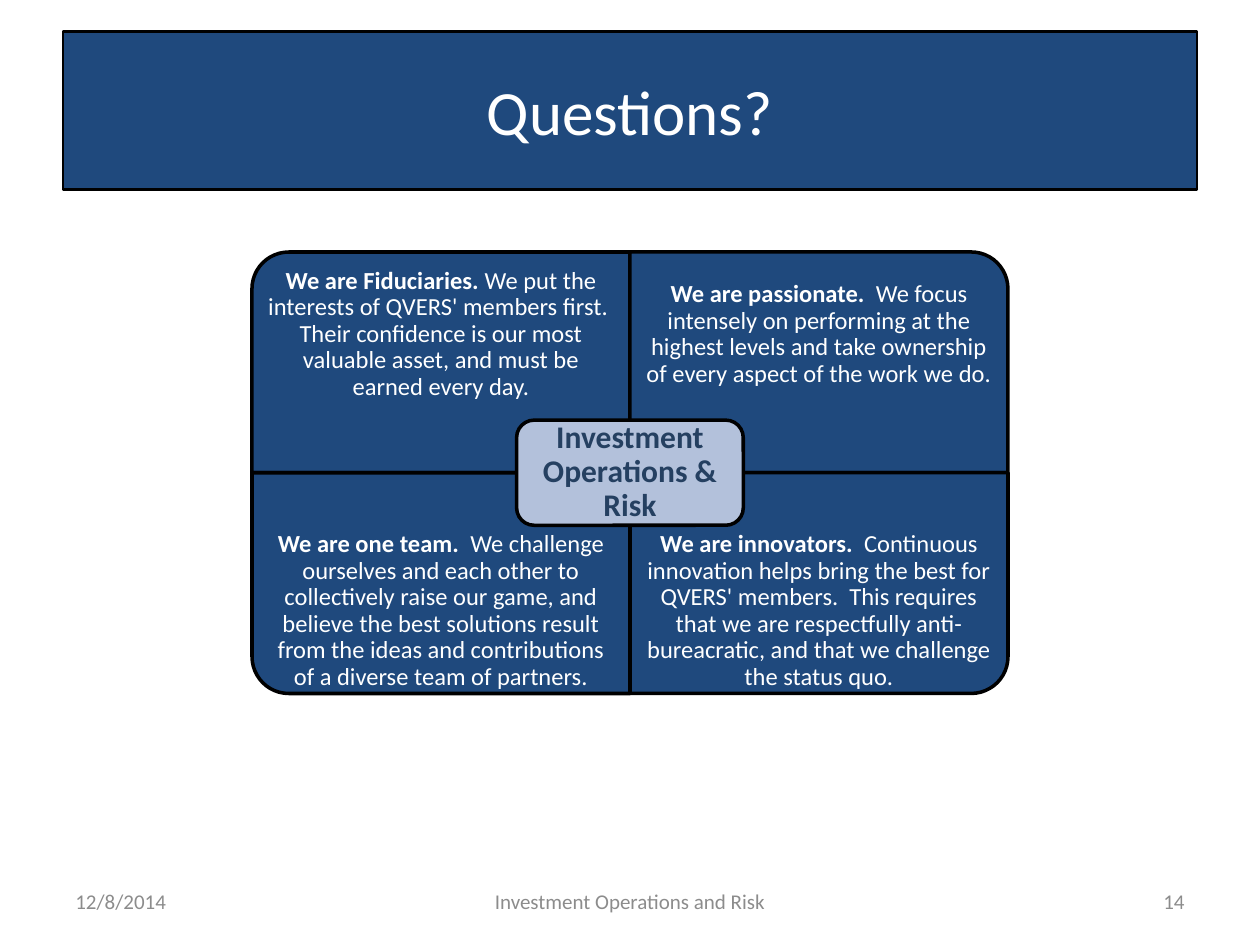
from pptx import Presentation
from pptx.dml.color import RGBColor
from pptx.enum.shapes import MSO_SHAPE
from pptx.enum.text import MSO_ANCHOR, PP_ALIGN
from pptx.util import Cm, Pt

RECTANGLE = MSO_SHAPE.RECTANGLE
ONE_ROUND_CORNER = MSO_SHAPE.ROUND_1_RECTANGLE
ROUNDED = MSO_SHAPE.ROUNDED_RECTANGLE
LEFT, CENTER, RIGHT = PP_ALIGN.LEFT, PP_ALIGN.CENTER, PP_ALIGN.RIGHT
MIDDLE = MSO_ANCHOR.MIDDLE

COLORS = {
    "navy": "1F497D",
    "pale": "B3C1DB",
    "ink": "254061",
    "gray": "8C8C8C",
    "black": "000000",
    "white": "FFFFFF",
}


class SlideBuilder:
    """Holds the style and the current slide; lengths are in centimetres."""

    font = "Calibri"

    def __init__(self, page):
        self.page = page

    def color(self, name):
        return RGBColor.from_string(COLORS[name])

    def shape(self, kind, left, top, width, height, fill, line_width, turn=0):
        # A quarter turn swaps the sides around the same centre
        if turn % 180:
            left += (width - height) / 2
            top += (height - width) / 2
            width, height = height, width
        box = self.page.shapes.add_shape(
            kind, Cm(left), Cm(top), Cm(width), Cm(height))
        box.rotation = turn
        box.shadow.inherit = False
        box.fill.solid()
        box.fill.fore_color.rgb = self.color(fill)
        box.line.color.rgb = self.color("black")
        box.line.width = Pt(line_width)
        return box

    def label(self, box, spans, size, color, align=CENTER):
        """Fill a box with one paragraph of (text, bold) spans."""
        frame = box.text_frame
        frame.word_wrap = True
        frame.vertical_anchor = MIDDLE
        para = frame.paragraphs[0]
        para.alignment = align
        for text, bold in spans:
            span = para.add_run()
            span.text = text
            span.font.name = self.font
            span.font.size = Pt(size)
            span.font.bold = bold
            span.font.color.rgb = self.color(color)

    def text(self, left, top, width, height, spans, size, color, align=CENTER):
        box = self.page.shapes.add_textbox(
            Cm(left), Cm(top), Cm(width), Cm(height))
        self.label(box, spans, size, color, align)
        return box

    def diagram_text(self, left, top, width, height, spans, size, color, inset):
        box = self.text(left, top, width, height, spans, size, color)
        frame = box.text_frame
        frame.margin_left = frame.margin_right = Cm(inset)
        frame.margin_top = frame.margin_bottom = Cm(inset)
        frame.paragraphs[0].line_spacing = 0.9


# Corner turn, heading and body of each quadrant, row by row
QUADRANTS = [
    (270, "We are Fiduciaries. ",
     "We put the interests of QVERS' members first.  Their confidence is our "
     "most valuable asset, and must be earned every day."),
    (0, "We are passionate.  ",
     "We focus intensely on performing at the highest levels and take "
     "ownership of every aspect of the work we do."),
    (180, "We are one team.  ",
     "We challenge ourselves and each other to collectively raise our game, "
     "and believe the best solutions result from the ideas and contributions "
     "of a diverse team of partners."),
    (90, "We are innovators.  ",
     "Continuous innovation helps bring the best for QVERS' members.  This "
     "requires that we are respectfully anti-bureacratic, and that we "
     "challenge the status quo."),
]

FOOTERS = [
    (1.27, 5.93, "12/8/2014", LEFT),
    (8.68, 8.04, "Investment Operations and Risk", CENTER),
    (18.2, 5.93, "14", RIGHT),
]

GRID_LEFT, GRID_TOP = 5.08, 5.08
CELL_WIDTH, CELL_HEIGHT, TEXT_HEIGHT = 7.62, 4.45, 3.33
HUB_WIDTH, HUB_HEIGHT, HUB_PADDING = 4.57, 2.12, 0.1


def main():
    deck = Presentation()
    deck.slide_width, deck.slide_height = Cm(25.4), Cm(19.05)
    builder = SlideBuilder(deck.slides.add_slide(deck.slide_layouts[6]))

    # Title banner
    banner = builder.shape(RECTANGLE, 1.27, 0.64, 22.86, 3.18, "navy", 1.5)
    builder.label(banner, [("Questions?", False)], 36, "white")

    # Four quadrants, text kept to the outer edge
    for index, (turn, heading, body) in enumerate(QUADRANTS):
        row, column = divmod(index, 2)
        left = GRID_LEFT + column * CELL_WIDTH
        top = GRID_TOP + row * CELL_HEIGHT
        builder.shape(ONE_ROUND_CORNER, left, top, CELL_WIDTH, CELL_HEIGHT,
                      "navy", 2, turn)
        text_top = top + row * (CELL_HEIGHT - TEXT_HEIGHT)
        builder.diagram_text(left, text_top, CELL_WIDTH, TEXT_HEIGHT,
                             [(heading, True), (body, False)],
                             14, "white", 0.28)

    # Hub over the centre of the grid
    hub_left = GRID_LEFT + CELL_WIDTH - HUB_WIDTH / 2
    hub_top = GRID_TOP + CELL_HEIGHT - HUB_HEIGHT / 2
    builder.shape(ROUNDED, hub_left, hub_top, HUB_WIDTH, HUB_HEIGHT, "pale", 2)
    builder.diagram_text(hub_left + HUB_PADDING, hub_top + HUB_PADDING,
                         HUB_WIDTH - 2 * HUB_PADDING,
                         HUB_HEIGHT - 2 * HUB_PADDING,
                         [("Investment Operations & Risk", True)],
                         18, "ink", 0.18)

    # Footer
    for left, width, text, align in FOOTERS:
        builder.text(left, 17.65, width, 1.02, [(text, False)],
                     12, "gray", align)

    deck.save("out.pptx")


if __name__ == "__main__":
    main()
